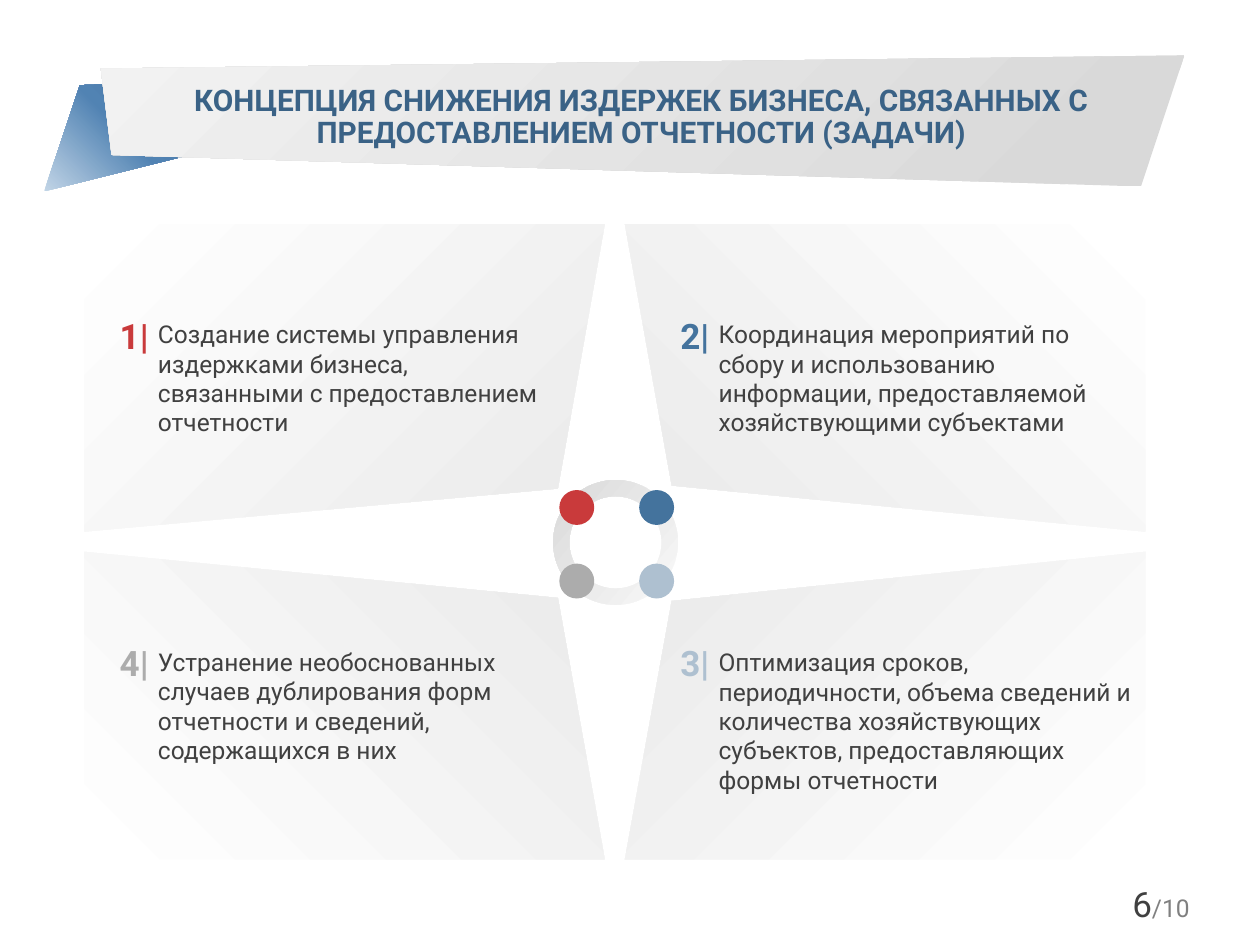
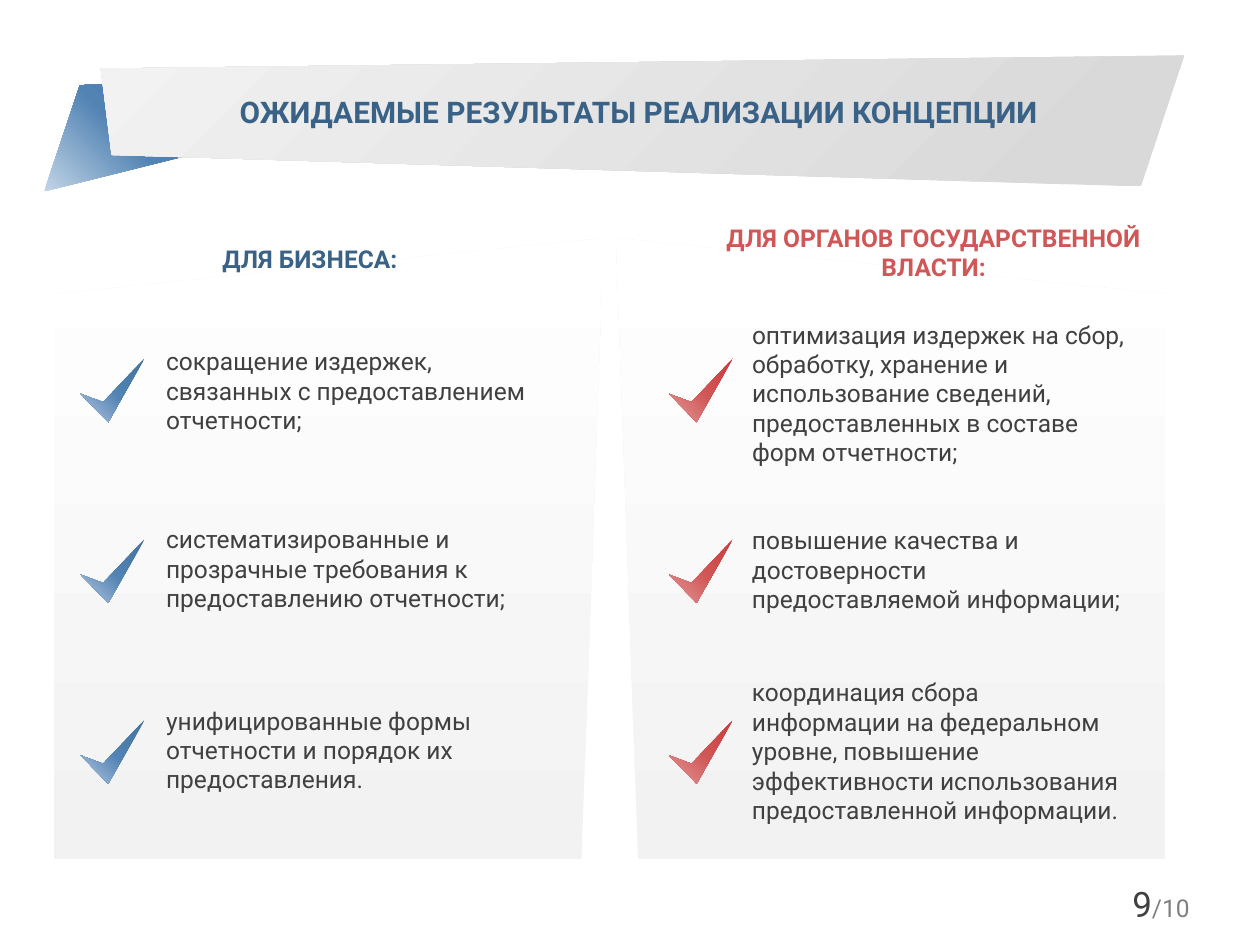
from pptx import Presentation
from pptx.dml.color import RGBColor
from pptx.enum.shapes import MSO_SHAPE
from pptx.enum.text import MSO_ANCHOR, MSO_AUTO_SIZE, PP_ALIGN
from pptx.oxml import parse_xml
from pptx.oxml.ns import nsdecls, qn
from pptx.util import Inches, Pt

WIDTH, HEIGHT = Inches(10), Inches(7.5)
COLS = 100
UNIT = WIDTH // COLS
FONT = "Roboto"
TOTAL = 10

WHITE = RGBColor(0xFF, 0xFF, 0xFF)
INK = RGBColor(0x40, 0x40, 0x40)
MUTED = RGBColor(0x80, 0x80, 0x80)
TITLE_BLUE = RGBColor(0x3A, 0x62, 0x86)
BLUE = RGBColor(0x44, 0x73, 0x9D)
MID_BLUE = RGBColor(0x51, 0x83, 0xB3)
PALE_BLUE = RGBColor(0xC2, 0xD5, 0xE7)
CHECK_BLUE = RGBColor(0xB6, 0xC6, 0xE2)
DOT_BLUE = RGBColor(0xAE, 0xC0, 0xD0)
RED = RGBColor(0xC9, 0x3A, 0x3B)
MID_RED = RGBColor(0xD1, 0x57, 0x57)
PALE_RED = RGBColor(0xE3, 0x99, 0x99)
GREY = RGBColor(0xAC, 0xAC, 0xAC)
BAND_DARK = RGBColor(0xD9, 0xD9, 0xD9)
BAND_LIGHT = RGBColor(0xF2, 0xF2, 0xF2)
PANEL_GREY = RGBColor(0xEA, 0xEA, 0xEA)
RING_LIGHT = RGBColor(0xF9, 0xF9, 0xF9)


def grid(*cells):
    return [round(c * UNIT) for c in cells]


def gradient(sp, stops, angle=None):
    gs = "".join(f'<a:gs pos="{pos * 1000}"><a:srgbClr val="{color}"/></a:gs>'
                 for pos, color in stops)
    if angle is None:
        way = '<a:path path="circle"><a:fillToRect l="100000" b="100000"/></a:path>'
    else:
        way = f'<a:lin ang="{angle * 60000}" scaled="0"/>'
    sp.fill.background()
    spPr = sp.element.spPr
    spPr.replace(spPr.find(qn("a:noFill")), parse_xml(
        f'<a:gradFill {nsdecls("a")} rotWithShape="1"><a:gsLst>{gs}</a:gsLst>{way}</a:gradFill>'))


def plain(sp):
    sp.shadow.inherit = False
    sp.line.fill.background()
    return sp


def outline(s, box, shares):
    x, y, w, h = grid(*box)
    points = [(round(x + w * px), round(y + h * py)) for px, py in shares]
    builder = s.shapes.build_freeform(*points[0], scale=1.0)
    builder.add_line_segments(points[1:], close=True)
    return plain(builder.convert_to_shape())


def preset(s, kind, box):
    return plain(s.shapes.add_shape(kind, *grid(*box)))


def add_run(p, text, size, color, bold=False):
    r = p.add_run()
    r.text = text
    f = r.font
    f.name, f.size, f.bold = FONT, Pt(size), bold
    f.color.rgb = color


def add_text(s, box, paragraphs, size=14, color=INK, bold=False,
             align=PP_ALIGN.LEFT, anchor=MSO_ANCHOR.MIDDLE, wrap=True):
    tf = s.shapes.add_textbox(*grid(*box)).text_frame
    tf.word_wrap = wrap
    tf.vertical_anchor = anchor
    for i, text in enumerate(paragraphs):
        p = tf.add_paragraph() if i else tf.paragraphs[0]
        p.alignment = align
        add_run(p, text, size, color, bold)


def add_header(s, title, box, spacing):
    fold = outline(s, (3.5, 6.5, 13.5, 8.7), [(0.21, 0.03), (0.95, 0), (1, 0.61), (0, 1)])
    gradient(fold, [(0, BLUE), (50, MID_BLUE), (100, PALE_BLUE)])
    band = outline(s, (8, 4.4, 86, 10.4), [(0, 0.1), (1, 0), (0.96, 1), (0.01, 0.76)])
    gradient(band, [(0, BAND_DARK), (10, BAND_DARK), (100, BAND_LIGHT)], 225)

    sp = s.shapes.title
    sp.element.getparent().append(sp.element)
    sp.left, sp.top, sp.width, sp.height = grid(*box)
    tf = sp.text_frame
    tf.word_wrap = True
    tf.auto_size = MSO_AUTO_SIZE.NONE
    tf.vertical_anchor = MSO_ANCHOR.MIDDLE
    p = tf.paragraphs[0]
    p.alignment = PP_ALIGN.CENTER
    p.line_spacing = spacing
    add_run(p, title, 17, TITLE_BLUE, True)


def add_page_number(s, number):
    tf = s.shapes.add_textbox(*grid(72.9, 69.7, 22.5, 4)).text_frame
    tf.word_wrap = True
    tf.vertical_anchor = MSO_ANCHOR.MIDDLE
    p = tf.paragraphs[0]
    p.alignment = PP_ALIGN.RIGHT
    add_run(p, str(number), 20, INK)
    add_run(p, f"/{TOTAL}", 14, MUTED)


def new_slide(prs, number, title, box, spacing):
    s = prs.slides.add_slide(prs.slide_layouts[5])
    add_header(s, title, box, spacing)
    add_page_number(s, number)
    return s


def add_task(s, box, right, bottom, notch, angle, number, color, text, text_box):
    x, y, w, h = box
    dx, dy = notch
    corner = [(0, 0), (1, 0), (1 - dx, 1 - dy), (0, 1)]
    panel = outline(s, box, [(1 - px if right else px, 1 - py if bottom else py)
                             for px, py in corner])
    gradient(panel, [(0, WHITE), (100, PANEL_GREY)], angle)
    number_x = x + (3.3 if right else 1.7)
    number_y = y + (6.6 if bottom else 6.7)
    text_top, text_width = text_box
    add_text(s, (number_x + 3.15, y + text_top, text_width, 12.2), [text])
    add_text(s, (number_x, number_y, 4.5, 4.4), [f"{number}|"], 20, color, True,
             PP_ALIGN.CENTER, MSO_ANCHOR.TOP, False)


def add_ring(s, box):
    x, y, w, h = box
    ring = preset(s, MSO_SHAPE.DONUT, box)
    ring.adjustments[0] = 0.13
    gradient(ring, [(0, RING_LIGHT), (100, BAND_DARK)], 220)
    dot = 0.28 * w
    for px, py, color in [(0.05, 0.08, RED), (0.69, 0.08, BLUE),
                          (0.69, 0.67, DOT_BLUE), (0.05, 0.67, GREY)]:
        sp = preset(s, MSO_SHAPE.OVAL, (x + px * w, y + py * h, dot, dot))
        sp.fill.solid()
        sp.fill.fore_color.rgb = color


def build_tasks(prs):
    s = new_slide(prs, 6, "КОНЦЕПЦИЯ СНИЖЕНИЯ ИЗДЕРЖЕК БИЗНЕСА, СВЯЗАННЫХ С "
                  "ПРЕДОСТАВЛЕНИЕМ ОТЧЕТНОСТИ (ЗАДАЧИ)", (9.3, 5.6, 83.2, 7.5), Pt(18))
    tasks = [
        (0, 0, (0.09, 0.14), 45, 1, RED, "Создание системы управления издержками бизнеса, "
         "связанными с предоставлением отчетности", (6.1, 32.2)),
        (1, 0, (0.09, 0.15), 135, 2, BLUE, "Координация мероприятий по сбору и использованию "
         "информации, предоставляемой хозяйствующими субъектами", (6.1, 33.9)),
        (1, 1, (0.09, 0.16), 225, 3, DOT_BLUE, "Оптимизация сроков, периодичности, объема "
         "сведений и количества хозяйствующих субъектов, предоставляющих формы отчетности",
         (7.3, 34.8)),
        (0, 1, (0.09, 0.15), 315, 4, GREY, "Устранение необоснованных случаев дублирования "
         "форм отчетности и сведений, содержащихся в них", (6.1, 31.5)),
    ]
    w, h, gap = 41.3, 24.4, 1.6
    for right, bottom, *task in tasks:
        box = (6.7 + right * (w + gap), 17.8 + bottom * (h + gap), w, h)
        add_task(s, box, right, bottom, *task)
    add_ring(s, (43.9, 38.1, 9.9, 9.9))


def add_results(s, box, right, heading, heading_box, color, stops, check_x, text_x, items):
    x, y, w, h = box
    shares = [(0, 0.09), (1, 0), (0.96, 1), (0, 1)]
    panel = outline(s, box, [(1 - px if right else px, py) for px, py in shares])
    gradient(panel, [(0, BAND_LIGHT), (100, WHITE)], 270)
    hx, hy, hw, hh = heading_box
    add_text(s, (x + hx, y + hy, hw, hh), [heading], 14, color, True, PP_ALIGN.CENTER)
    for i, (paragraphs, center, width) in enumerate(items):
        check = outline(s, (x + check_x, y + 9.5 + i * 14.35, 5.1, 5.1),
                        [(1, 0), (0.35, 0.69), (0, 0.56), (0.43, 1)])
        gradient(check, stops, 135)
        add_text(s, (x + text_x, y + center - 6, width, 12), paragraphs)


def build_results(prs):
    s = new_slide(prs, 9, "ОЖИДАЕМЫЕ РЕЗУЛЬТАТЫ РЕАЛИЗАЦИИ КОНЦЕПЦИИ",
                  (13.8, 5.2, 73.8, 7.6), 0.9)
    business = [
        (["сокращение издержек, связанных с предоставлением отчетности;"], 12.1, 33),
        (["систематизированные и прозрачные требования к предоставлению отчетности;"], 26.2, 33),
        (["унифицированные формы отчетности и порядок их предоставления."], 40.6, 27.6),
    ]
    government = [
        (["оптимизация издержек на сбор, обработку, хранение и использование сведений,",
          "предоставленных в составе форм отчетности;"], 12.3, 33.1),
        (["повышение качества и достоверности предоставляемой информации;"], 26.3, 31.7),
        (["координация сбора информации на федеральном уровне, повышение эффективности "
          "использования предоставленной информации."], 40.7, 31.7),
    ]
    w, h = 43.6, 49.3
    add_results(s, (4.3, 18.9, w, h), False, "ДЛЯ БИЗНЕСА:", (11, -0.3, 18.6, 3.9),
                TITLE_BLUE, [(0, BLUE), (50, MID_BLUE), (100, CHECK_BLUE)], 2.1, 7.9, business)
    add_results(s, (48.9, 18.9, w, h), True, "ДЛЯ ОРГАНОВ ГОСУДАРСТВЕННОЙ ВЛАСТИ:",
                (7.7, -1.5, 35, 5.2), MID_RED, [(0, RED), (50, MID_RED), (100, PALE_RED)],
                4.2, 9.8, government)


def main():
    prs = Presentation()
    prs.slide_width, prs.slide_height = WIDTH, HEIGHT
    build_tasks(prs)
    build_results(prs)
    prs.save("out.pptx")


if __name__ == "__main__":
    main()
